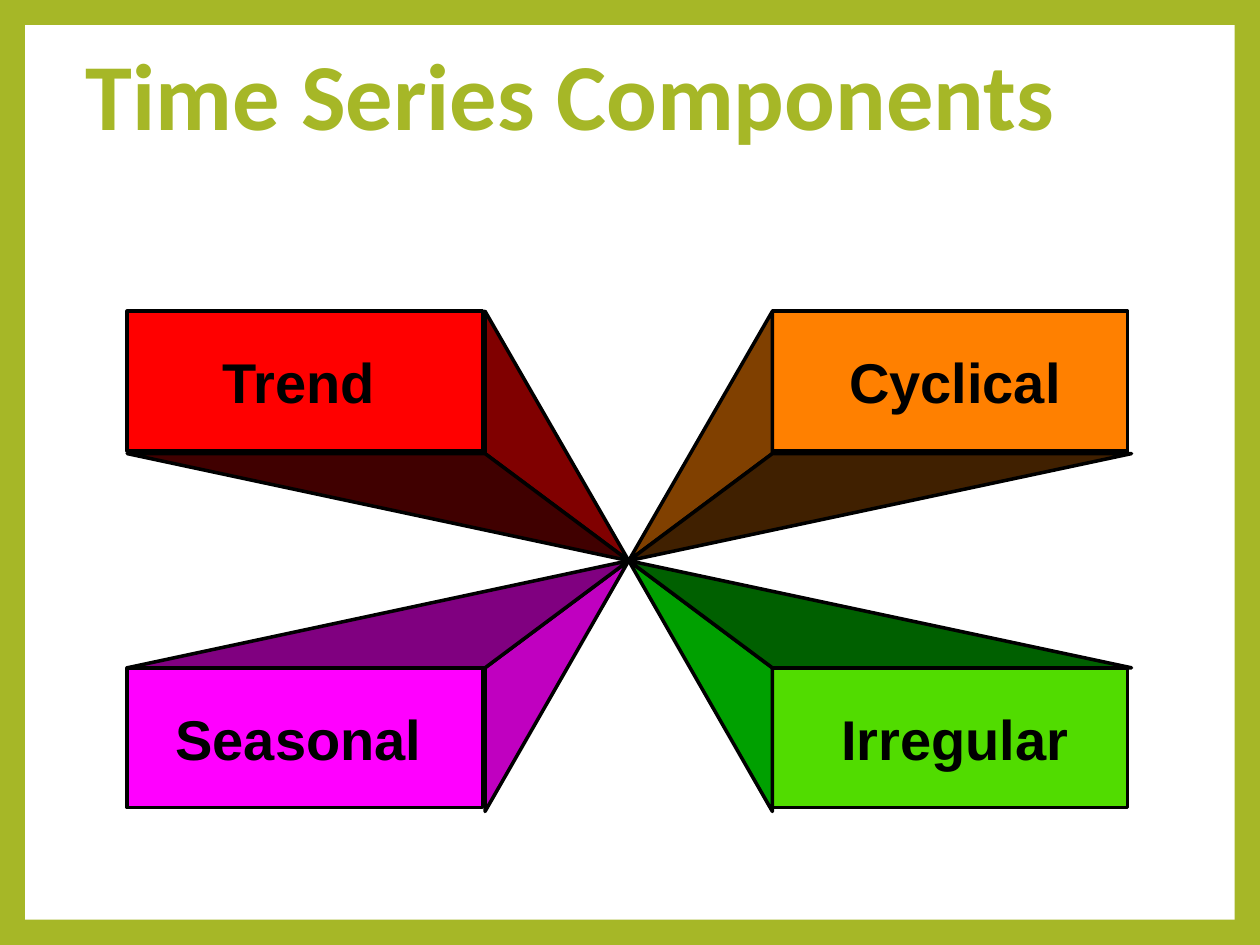
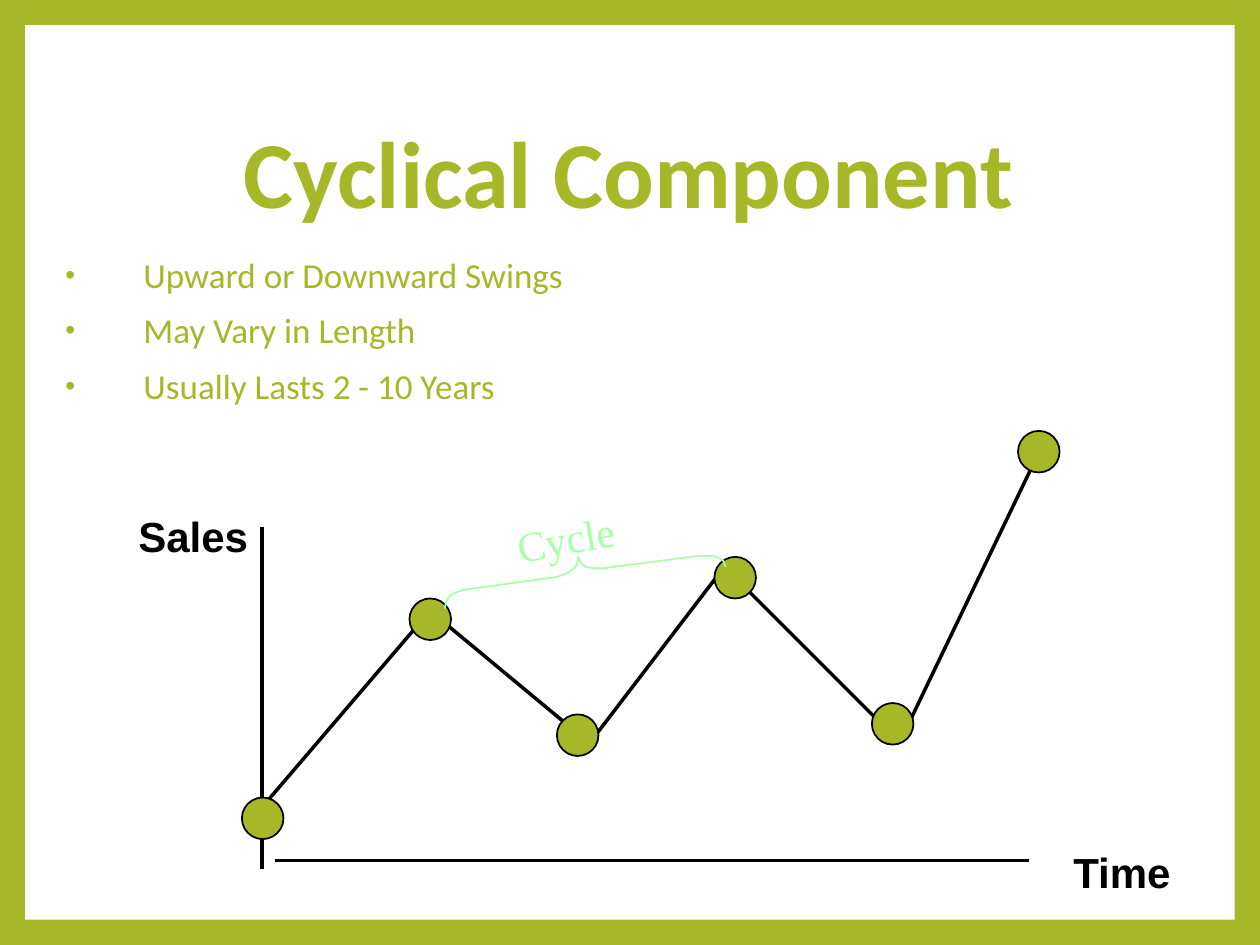
"""Build two slides on time series: the four components, and the cyclical one."""
from dataclasses import dataclass

from lxml import etree
from pptx import Presentation
from pptx.dml.color import RGBColor
from pptx.enum.shapes import MSO_CONNECTOR, MSO_SHAPE
from pptx.enum.text import MSO_ANCHOR, PP_ALIGN
from pptx.oxml.ns import qn
from pptx.util import Inches, Pt

STRAIGHT = MSO_CONNECTOR.STRAIGHT
RECT, OVAL = MSO_SHAPE.RECTANGLE, MSO_SHAPE.OVAL
TOP, MIDDLE = MSO_ANCHOR.TOP, MSO_ANCHOR.MIDDLE
LEFT, CENTER = PP_ALIGN.LEFT, PP_ALIGN.CENTER

GREEN, WHITE, BLACK, MINT, GREY = "A6B727", "FFFFFF", "000000", "A7FFA7", "808080"
SLIDE_W, SLIDE_H, BORDER = 10, 7.5, 0.2

VANISHING = (4.99, 4.45)
BLOCK_W, BLOCK_H = 2.82, 1.11
LABEL_W, LABEL_H, LABEL_DROP = 2.26, 0.64, 0.24
DOT = 0.33

Point = tuple[float, float]


@dataclass
class Style:
    """Font settings of a text box."""
    size: int
    font: str
    color: str
    bold: bool = True
    align: PP_ALIGN = LEFT
    anchor: MSO_ANCHOR = TOP


@dataclass
class Block:
    """A front face with two sides running to the vanishing point."""
    label: str
    left: float
    top: float
    outer: Point
    inner: Point
    label_center: float
    front: str
    level_side: str
    upright_side: str


TITLE = Style(54, "Calibri", GREEN, anchor=MIDDLE)
CENTERED_TITLE = Style(54, "Calibri", GREEN, align=CENTER, anchor=MIDDLE)
BODY = Style(20, "Calibri", GREEN, bold=False)
BLOCK_LABEL = Style(32, "Arial", BLACK, align=CENTER)
AXIS_LABEL = Style(24, "Arial", BLACK)
CYCLE_LABEL = Style(24, "Times New Roman", MINT, bold=False)

BLOCKS = [
    Block("Trend", 1.01, 2.47, (1.01, 2.47), (3.85, 3.6), 2.37, "FF0000", "400000", "800000"),
    Block("Seasonal", 1.01, 5.3, (1.01, 6.44), (3.85, 5.3), 2.37, "FF00FF", "800080", "C000C0"),
    Block("Cyclical", 6.13, 2.47, (8.98, 2.47), (6.13, 3.6), 7.58, "FF8000", "402000", "804000"),
    Block("Irregular", 6.13, 5.3, (8.98, 6.44), (6.13, 5.3), 7.58, "51DC00", "006000", "00A000"),
]
BULLETS = ["Upward or Downward Swings", "May Vary in Length", "Usually Lasts 2 - 10 Years"]
AXES = [((2.08, 4.18), (2.08, 6.9)), ((2.18, 6.83), (8.17, 6.83))]
SWINGS = [
    ((2, 6.5), (3.42, 4.84)), ((3.5, 4.92), (4.5, 5.75)), ((4.67, 5.91), (5.74, 4.51)),
    ((5.93, 4.68), (7, 5.75)), ((7.17, 5.83), (8.25, 3.58)),
]
DOTS = [(1.92, 6.33), (3.25, 4.75), (4.42, 5.67), (5.67, 4.42), (6.92, 5.58), (8.08, 3.42)]
BRACE = [
    (5.76, 4.5), (5.74, 4.45), (5.69, 4.42), (5.63, 4.41), (5.56, 4.41), (4.79, 4.51),
    (4.72, 4.51), (4.65, 4.5), (4.61, 4.47), (4.59, 4.42), (4.58, 4.48), (4.55, 4.52),
    (4.5, 4.55), (4.42, 4.58), (3.69, 4.68), (3.62, 4.7), (3.57, 4.73), (3.54, 4.78),
    (3.53, 4.83),
]


def rgb(color: str) -> RGBColor:
    """Turn a hex string into a colour."""
    return RGBColor.from_string(color)


def paint(sp, fill: str | None, line: str | None, width: float = 2) -> None:
    """Set fill and outline, and drop the shadow."""
    sp.shadow.inherit = False
    if fill:
        sp.fill.solid()
        sp.fill.fore_color.rgb = rgb(fill)
    else:
        sp.fill.background()
    if line:
        sp.line.color.rgb = rgb(line)
        sp.line.width = Pt(width)
    else:
        sp.line.fill.background()


def add_box(s, kind: MSO_SHAPE, x: float, y: float, w: float, h: float,
            fill: str, line: str | None, width: float = 2) -> None:
    """Draw a preset shape."""
    sp = s.shapes.add_shape(kind, Inches(x), Inches(y), Inches(w), Inches(h))
    paint(sp, fill, line, width)


def add_outline(s, points: list[Point], fill: str | None, line: str, width: float) -> None:
    """Draw a freeform, closed when it has a fill."""
    emu = [(Inches(x), Inches(y)) for x, y in points]
    builder = s.shapes.build_freeform(*emu[0])
    builder.add_line_segments(emu[1:], close=fill is not None)
    paint(builder.convert_to_shape(), fill, line, width)


def add_line(s, start: Point, end: Point) -> None:
    """Draw a straight black line."""
    cx = s.shapes.add_connector(STRAIGHT, *(Inches(v) for v in start + end))
    cx.line.color.rgb = rgb(BLACK)
    cx.line.width = Pt(2)
    etree.SubElement(cx._element.spPr, qn("a:effectLst"))


def add_text(s, x: float, y: float, w: float, h: float, text: str, style: Style):
    """Write text in a wrapped box and return the box."""
    sp = s.shapes.add_textbox(Inches(x), Inches(y), Inches(w), Inches(h))
    tf = sp.text_frame
    tf.word_wrap = True
    tf.vertical_anchor = style.anchor
    tf.text = text
    for p in tf.paragraphs:
        p.alignment = style.align
        for r in p.runs:
            r.font.size, r.font.name, r.font.bold = Pt(style.size), style.font, style.bold
            r.font.color.rgb = rgb(style.color)
    return sp


def add_title(s, x: float, y: float, w: float, h: float, text: str, style: Style):
    """Write a slide title and return its run."""
    p = add_text(s, x, y, w, h, text, style).text_frame.paragraphs[0]
    p.line_spacing = 0.9
    return p.runs[0]


def add_text_shadow(r) -> None:
    """Give a run a soft shadow to the lower right."""
    effects = etree.Element(qn("a:effectLst"))
    shadow = etree.SubElement(effects, qn("a:outerShdw"), dist="38100", dir="2700000")
    color = etree.SubElement(shadow, qn("a:srgbClr"), val=GREY)
    etree.SubElement(color, qn("a:alpha"), val="43000")
    r.font._element.find(qn("a:solidFill")).addnext(effects)


def add_bullet(p) -> None:
    """Give a paragraph a hanging bullet."""
    p.line_spacing, p.space_before = 0.9, Pt(10)
    ppr = p._p.get_or_add_pPr()
    ppr.set("marL", str(Inches(0.62)))
    ppr.set("indent", str(-Inches(0.62)))
    color = etree.SubElement(ppr, qn("a:buClr"))
    etree.SubElement(color, qn("a:srgbClr"), val=GREEN)
    etree.SubElement(ppr, qn("a:buSzPct"), val="80000")
    etree.SubElement(ppr, qn("a:buFont"), typeface="Arial")
    etree.SubElement(ppr, qn("a:buChar"), char="•")


def new_slide(prs):
    """Add a blank slide with a green border around a white panel."""
    s = prs.slides.add_slide(prs.slide_layouts[6])
    s.background.fill.solid()
    s.background.fill.fore_color.rgb = rgb(GREEN)
    add_box(s, RECT, BORDER, BORDER, SLIDE_W - 2 * BORDER, SLIDE_H - 2 * BORDER, WHITE, None)
    return s


def add_block(s, b: Block) -> None:
    """Draw a block in perspective with its label."""
    add_box(s, RECT, b.left, b.top, BLOCK_W, BLOCK_H, b.front, BLACK)
    level_corner, upright_corner = (b.outer[0], b.inner[1]), (b.inner[0], b.outer[1])
    add_outline(s, [upright_corner, VANISHING, b.inner], b.upright_side, BLACK, 2)
    add_outline(s, [level_corner, b.inner, VANISHING], b.level_side, BLACK, 2)
    add_text(s, b.label_center - LABEL_W / 2, b.top + LABEL_DROP, LABEL_W, LABEL_H,
             b.label, BLOCK_LABEL)


def build_components(prs) -> None:
    """Build the slide with the four components."""
    s = new_slide(prs)
    for b in BLOCKS:
        add_block(s, b)
    add_text_shadow(add_title(s, 0.58, 0.17, 9.33, 1.24, "Time Series Components", TITLE))


def build_cyclical(prs) -> None:
    """Build the slide with the cyclical swings."""
    s = new_slide(prs)
    add_title(s, 0.94, 0.67, 8.1, 1.48, "Cyclical Component", CENTERED_TITLE)
    body = add_text(s, 0.42, 2, 9.58, 4.5, "\n".join(BULLETS), BODY)
    for p in body.text_frame.paragraphs:
        add_bullet(p)
    for start, end in AXES + SWINGS:
        add_line(s, start, end)
    add_text(s, 1, 4, 1.58, 0.5, "Sales", AXIS_LABEL)
    add_text(s, 8.42, 6.67, 1.58, 0.5, "Time", AXIS_LABEL)
    for x, y in DOTS:
        add_box(s, OVAL, x, y, DOT, DOT, GREEN, BLACK, 1)
    add_outline(s, BRACE, None, MINT, 1)
    add_text(s, 4, 4, 1.25, 0.5, "Cycle", CYCLE_LABEL).rotation = 350


def main() -> None:
    """Build and save the presentation."""
    prs = Presentation()
    prs.slide_width, prs.slide_height = Inches(SLIDE_W), Inches(SLIDE_H)
    build_components(prs)
    build_cyclical(prs)
    prs.save("out.pptx")


if __name__ == "__main__":
    main()
